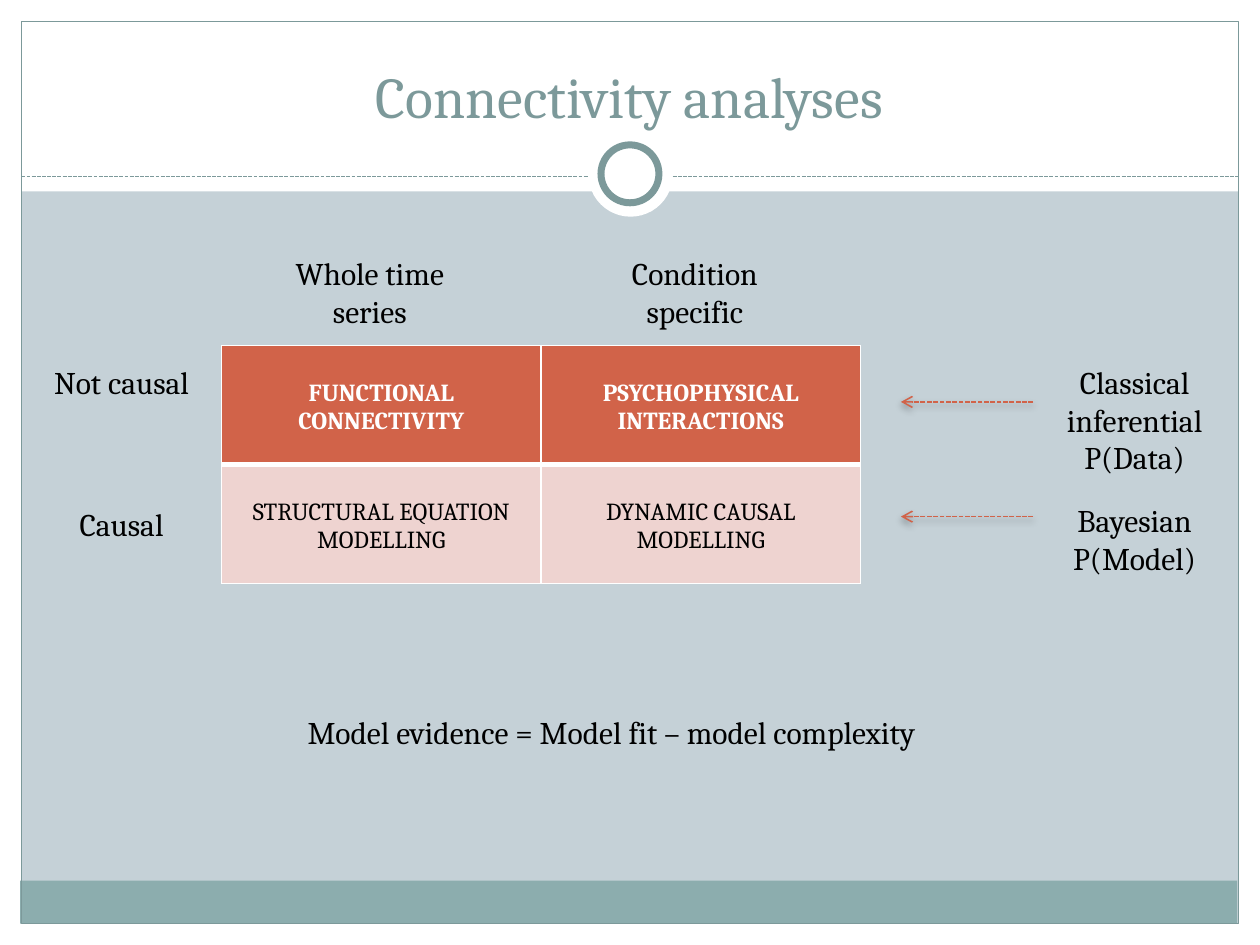
from lxml.etree import SubElement
from pptx import Presentation
from pptx.dml.color import RGBColor
from pptx.enum.dml import MSO_LINE_DASH_STYLE as DASH
from pptx.enum.shapes import MSO_CONNECTOR, MSO_SHAPE
from pptx.enum.text import MSO_ANCHOR, PP_ALIGN
from pptx.oxml import parse_xml
from pptx.oxml.ns import nsdecls, qn
from pptx.util import Pt

PX = 9144  # 100 px to the inch
TEAL, ORANGE, WHITE, BLACK = "7C999A", "D16349", "FFFFFF", "000000"


def paint(color_format, hex_color):
    color_format.rgb = RGBColor.from_string(hex_color)


def write(text_frame, text, size, color, bold=False):
    text_frame.word_wrap = True
    text_frame.text = text
    for paragraph in text_frame.paragraphs:
        paragraph.alignment = PP_ALIGN.CENTER
        font = paragraph.runs[0].font
        font.name, font.size, font.bold = "Cambria", Pt(size), bold
        paint(font.color, color)


presentation = Presentation()
presentation.slide_width, presentation.slide_height = 1000 * PX, 750 * PX
slide = presentation.slides.add_slide(presentation.slide_layouts[6])
shapes = slide.shapes
slide.background.fill.solid()
paint(slide.background.fill.fore_color, "C5D1D7")

# White margins, footer band, frame and the ring on the divider
decorations = [
    (MSO_SHAPE.RECTANGLE, 0, 733, 1000, 17, WHITE, None),
    (MSO_SHAPE.RECTANGLE, 0, 0, 1000, 152, WHITE, None),
    (MSO_SHAPE.RECTANGLE, 0, 0, 17, 750, WHITE, None),
    (MSO_SHAPE.RECTANGLE, 983, 0, 17, 750, WHITE, None),
    (MSO_SHAPE.RECTANGLE, 16, 699, 966, 34, "8CADAE", None),
    (MSO_SHAPE.RECTANGLE, 17, 17, 966, 716, None, 0.75),
    (MSO_SHAPE.OVAL, 467, 105, 67, 67, WHITE, None),
    (MSO_SHAPE.OVAL, 477, 115, 46, 46, WHITE, 4),
]
for kind, left, top, width, height, fill, line_width in decorations:
    shape = shapes.add_shape(kind, left * PX, top * PX, width * PX, height * PX)
    shape.shadow.inherit = False
    if fill:
        shape.fill.solid()
        paint(shape.fill.fore_color, fill)
    else:
        shape.fill.background()
    if line_width:
        shape.line.width = Pt(line_width)
        paint(shape.line.color, TEAL)
    else:
        shape.line.fill.background()

# Dashed divider on either side of the ring, and the two arrows
lines = [
    (17, 467, 140, TEAL, 0.75, False),
    (534, 983, 140, TEAL, 0.75, False),
    (820, 715, 319, ORANGE, 0.9, True),
    (820, 715, 410, ORANGE, 0.9, True),
]
for start, end, y, color, line_width, is_arrow in lines:
    connector = shapes.add_connector(
        MSO_CONNECTOR.STRAIGHT, start * PX, y * PX, end * PX, y * PX)
    connector.line.width = Pt(line_width)
    connector.line.dash_style = DASH.SQUARE_DOT
    paint(connector.line.color, color)
    properties = connector._element.spPr
    effects = SubElement(properties, qn("a:effectLst"))
    if is_arrow:
        SubElement(properties.find(qn("a:ln")), qn("a:tailEnd"), type="arrow")
        effects.append(parse_xml(
            f'<a:outerShdw {nsdecls("a")} blurRad="{Pt(4)}" dist="{Pt(2)}" '
            'dir="5400000" rotWithShape="0"><a:srgbClr val="000000">'
            '<a:alpha val="35000"/></a:srgbClr></a:outerShdw>'))

# Title and labels
labels = [
    ("Connectivity analyses", 33, 25, 933, 83, 33, TEAL),
    ("Not causal", 16, 283, 161, 40, 18, BLACK),
    ("Causal", 16, 396, 161, 40, 18, BLACK),
    ("Whole time series", 213, 197, 161, 71, 18, BLACK),
    ("Condition specific", 471, 197, 161, 71, 18, BLACK),
    ("Classical inferential\nP(Data)", 820, 283, 161, 101, 18, BLACK),
    ("Bayesian\nP(Model)", 820, 393, 161, 71, 18, BLACK),
    ("Model evidence = Model fit – model complexity ", 157, 561, 662, 40, 18, BLACK),
]
for text, left, top, width, height, size, color in labels:
    box = shapes.add_textbox(left * PX, top * PX, width * PX, height * PX)
    write(box.text_frame, text, size, color)
    if color == TEAL:
        box.text_frame.vertical_anchor = MSO_ANCHOR.BOTTOM

# Table of methods
rows = [
    (["FUNCTIONAL CONNECTIVITY", "PSYCHOPHYSICAL INTERACTIONS"], ORANGE, WHITE, True),
    (["STRUCTURAL EQUATION MODELLING", "DYNAMIC CAUSAL MODELLING"], "EED3D0", BLACK, False),
]
table = shapes.add_table(2, 2, 176 * PX, 274 * PX, 507 * PX, 189 * PX).table
for r, (texts, fill, color, is_header) in enumerate(rows):
    for c, text in enumerate(texts):
        cell = table.cell(r, c)
        write(cell.text_frame, text, 14, color, is_header)
        cell.margin_top = 27 * PX
        cell.fill.solid()
        paint(cell.fill.fore_color, fill)
        widths = {"L": 1, "R": 1, "T": 1 if is_header else 3, "B": 3 if is_header else 1}
        for position, (side, line_width) in enumerate(widths.items()):
            cell._tc.get_or_add_tcPr().insert(position, parse_xml(
                f'<a:ln{side} {nsdecls("a")} w="{Pt(line_width)}"><a:solidFill>'
                f'<a:srgbClr val="{WHITE}"/></a:solidFill></a:ln{side}>'))

presentation.save("out.pptx")
